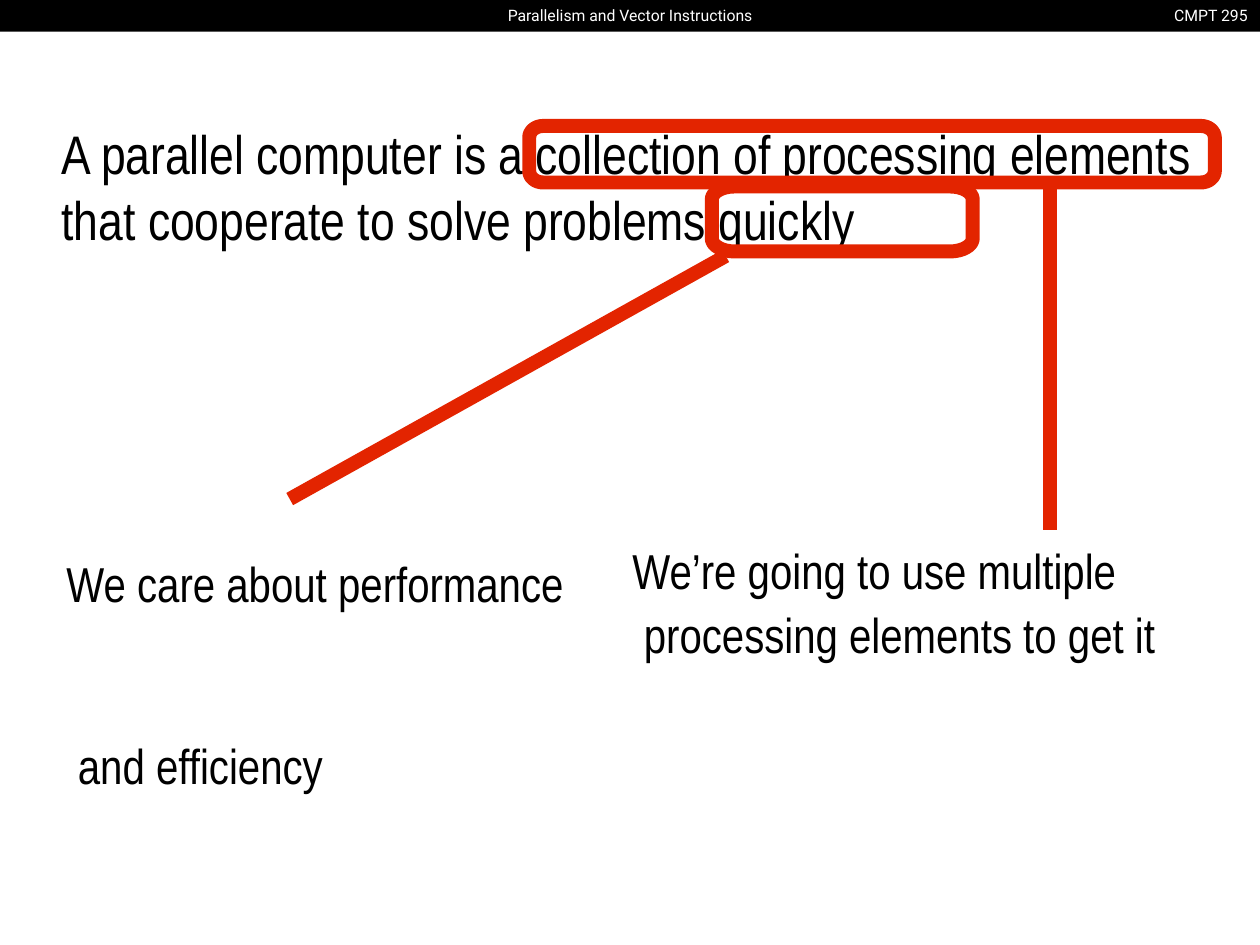
from dataclasses import dataclass
from math import cos, pi, sin

from lxml.etree import SubElement
from pptx import Presentation
from pptx.dml.color import RGBColor
from pptx.enum.shapes import MSO_CONNECTOR, MSO_SHAPE
from pptx.enum.text import MSO_ANCHOR, MSO_AUTO_SIZE, PP_ALIGN
from pptx.oxml.ns import qn
from pptx.util import Cm, Pt

COLORS = {"text": "000000", "bar": "000000", "header": "FFFFFF", "mark": "E32400"}
MARK_WIDTH = Pt(8)
CORNER_STEPS = 8


@dataclass
class Line:
    text: str
    indent: float = 0
    spacing: object = 1.0
    before: float = 3


@dataclass
class TextBlock:
    box: tuple
    size: float
    lines: list


@dataclass
class Header:
    text: str
    box: tuple
    align: PP_ALIGN


@dataclass
class Outline:
    box: tuple
    rx: float
    ry: float


@dataclass
class Pointer:
    start: tuple
    end: tuple


STATEMENT = TextBlock((1.24, 2.41, 23.62, 2.59), 31, [
    Line("A parallel computer is a collection of processing elements "
         "that cooperate to solve problems quickly", 0, 1.01, 0),
])
REASONS = [
    TextBlock((1.14, 9.98, 10.41, 3.68), 28, [
        Line("We care about performance", 0.2, Pt(67)),
        Line("and efficiency", 0.43, Pt(67), 37),
    ]),
    TextBlock((12.7, 10.9, 11.53, 2.49), 28, [
        Line("We’re going to use multiple", 0.05),
        Line("processing elements to get it", 0.28),
    ]),
]
HEADERS = [
    Header("Parallelism and Vector Instructions", (7.7, 0, 10, 0.64), PP_ALIGN.CENTER),
    Header("CMPT 295", (21.4, 0, 4, 0.64), PP_ALIGN.RIGHT),
]
OUTLINES = [
    Outline((14.35, 3.76, 5.26, 1.31), 0.46, 0.26),
    Outline((10.67, 2.54, 13.82, 1.14), 0.28, 0.23),
]
POINTERS = [
    Pointer((14.63, 5.16), (5.84, 10.06)),
    Pointer((21.16, 3.81), (21.16, 10.69)),
]


def rgb(name: str) -> RGBColor:
    return RGBColor.from_string(COLORS[name])


def apply(obj, values: dict) -> None:
    for name, value in values.items():
        setattr(obj, name, value)


def place(sp, box: tuple) -> None:
    apply(sp, dict(zip(("left", "top", "width", "height"), map(Cm, box))))


def style_font(r, name: str, size: float, color: str) -> None:
    apply(r.font, {"name": name, "size": Pt(size), "bold": False})
    r.font.color.rgb = rgb(color)


def fill_placeholder(sp, block: TextBlock) -> None:
    place(sp, block.box)
    tf = sp.text_frame
    apply(tf, {"margin_left": 0, "margin_top": 0, "margin_right": 0,
               "margin_bottom": 0, "word_wrap": True,
               "auto_size": MSO_AUTO_SIZE.NONE,
               "vertical_anchor": MSO_ANCHOR.TOP})
    for i, line in enumerate(block.lines):
        p = tf.add_paragraph() if i else tf.paragraphs[0]
        apply(p, {"alignment": PP_ALIGN.LEFT, "line_spacing": line.spacing,
                  "space_before": Pt(line.before), "space_after": Pt(0)})
        pPr = p._p.get_or_add_pPr()
        pPr.set("marL", str(Cm(line.indent)))
        pPr.set("indent", "0")
        SubElement(pPr, qn("a:buNone"))
        r = p.add_run()
        r.text = line.text
        style_font(r, "Arial Narrow", block.size, "text")


def add_header_bar(s, width: int) -> None:
    sp = s.shapes.add_shape(MSO_SHAPE.RECTANGLE, 0, 0, width, Cm(0.64))
    sp.shadow.inherit = False
    sp.fill.solid()
    sp.fill.fore_color.rgb = rgb("bar")
    sp.line.fill.background()


def add_header(s, header: Header) -> None:
    sp = s.shapes.add_textbox(*map(Cm, header.box))
    tf = sp.text_frame
    tf.word_wrap = True
    p = tf.paragraphs[0]
    p.alignment = header.align
    r = p.add_run()
    r.text = header.text
    style_font(r, "Roboto", 9, "header")


def style_mark(sp) -> None:
    sp.line.color.rgb = rgb("mark")
    sp.line.width = MARK_WIDTH


def add_outline(s, outline: Outline) -> None:
    """Draw a box whose corners are quarter ellipses."""
    x, y, w, h = outline.box
    rx, ry = outline.rx, outline.ry
    centers = [(x + w - rx, y + h - ry), (x + rx, y + h - ry),
               (x + rx, y + ry), (x + w - rx, y + ry)]
    points = []
    for quarter, (cx, cy) in enumerate(centers):
        for step in range(CORNER_STEPS + 1):
            angle = (quarter + step / CORNER_STEPS) * pi / 2
            points.append((Cm(cx + rx * cos(angle)), Cm(cy + ry * sin(angle))))
    builder = s.shapes.build_freeform(*points[0])
    builder.add_line_segments(points[1:], close=True)
    sp = builder.convert_to_shape()
    sp.shadow.inherit = False
    sp.fill.background()
    style_mark(sp)


def add_pointer(s, pointer: Pointer) -> None:
    sp = s.shapes.add_connector(MSO_CONNECTOR.STRAIGHT,
                                *map(Cm, pointer.start + pointer.end))
    style_mark(sp)
    SubElement(sp._element.spPr, qn("a:effectLst"))


def main() -> None:
    prs = Presentation()
    apply(prs, {"slide_width": Cm(25.4), "slide_height": Cm(19.05)})
    s = prs.slides.add_slide(prs.slide_layouts.get_by_name("Two Content"))
    title, *bodies = list(s.placeholders)
    fill_placeholder(title, STATEMENT)
    for sp, block in zip(bodies, REASONS):
        fill_placeholder(sp, block)
    add_header_bar(s, prs.slide_width)
    for header in HEADERS:
        add_header(s, header)
    for outline, pointer in zip(OUTLINES, POINTERS):
        add_outline(s, outline)
        add_pointer(s, pointer)
    prs.save("out.pptx")


if __name__ == "__main__":
    main()
